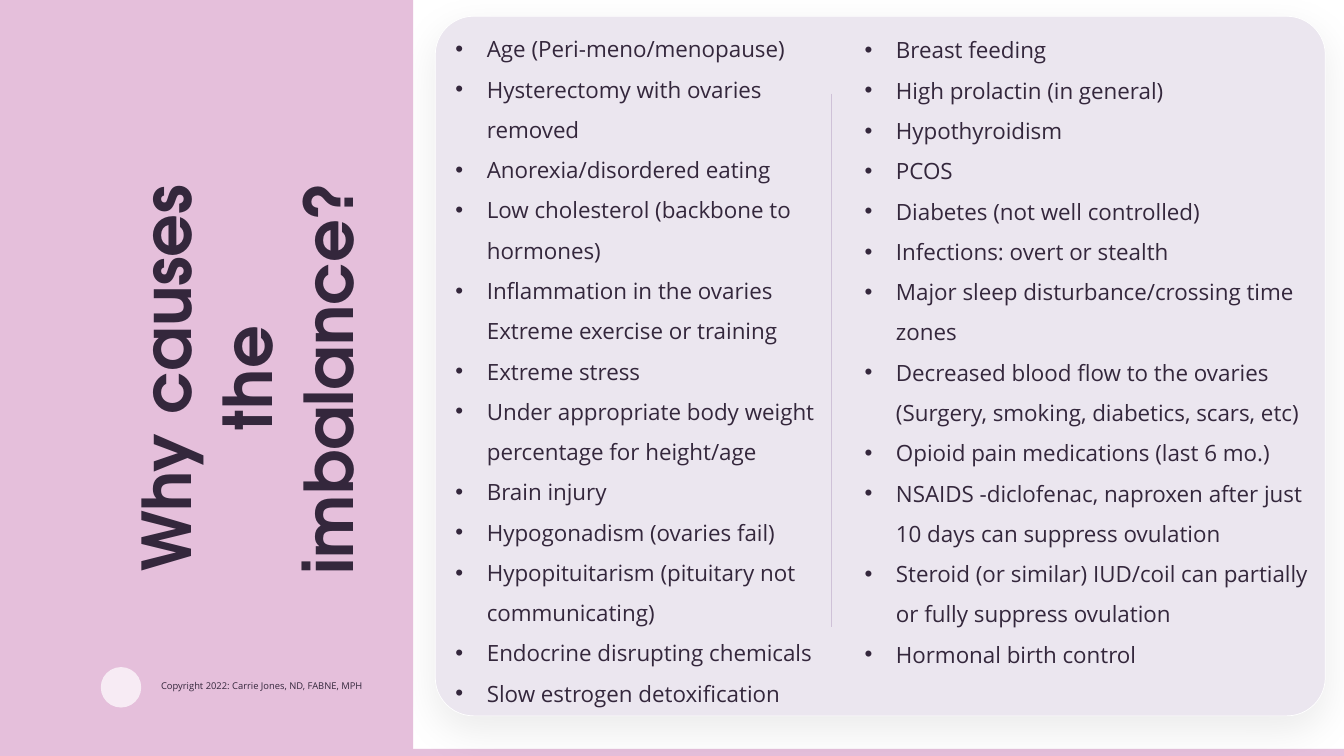
from collections import namedtuple

from lxml import etree
from pptx import Presentation
from pptx.dml.color import RGBColor
from pptx.enum.shapes import MSO_CONNECTOR, MSO_SHAPE
from pptx.enum.text import MSO_AUTO_SIZE, PP_ALIGN
from pptx.oxml.ns import qn
from pptx.util import Cm, Pt

RECTANGLE = MSO_SHAPE.RECTANGLE
ROUNDED = MSO_SHAPE.ROUNDED_RECTANGLE
OVAL = MSO_SHAPE.OVAL
STRAIGHT = MSO_CONNECTOR.STRAIGHT
GROW = MSO_AUTO_SIZE.SHAPE_TO_FIT_TEXT
CENTER = PP_ALIGN.CENTER

COLORS = {
    "pink": "E5BFDB",
    "lilac": "EBE6EF",
    "divider": "CEC1D7",
    "ink": "34273C",
    "white": "FFFFFF",
    "shadow": "000000",
}
BODY_FONT = "Open Sans"
TITLE_FONT = "TeX Gyre Adventor"
BULLET_INDENT = 0.79

TITLE = "Why causes the imbalance?"
COPYRIGHT = "Copyright 2022: Carrie Jones, ND, FABNE, MPH"
LEFT_CAUSES = [
    "Age (Peri-meno/menopause)",
    "Hysterectomy with ovaries removed",
    "Anorexia/disordered eating",
    "Low cholesterol (backbone to hormones)",
    "Inflammation in the ovaries Extreme exercise or training",
    "Extreme stress",
    "Under appropriate body weight percentage for height/age",
    "Brain injury",
    "Hypogonadism (ovaries fail)",
    "Hypopituitarism (pituitary not communicating)",
    "Endocrine disrupting chemicals",
    "Slow estrogen detoxification",
]
RIGHT_CAUSES = [
    "Breast feeding",
    "High prolactin (in general)",
    "Hypothyroidism",
    "PCOS",
    "Diabetes (not well controlled)",
    "Infections: overt or stealth",
    "Major sleep disturbance/crossing time zones",
    "Decreased blood flow to the ovaries (Surgery, smoking, diabetics, scars, etc)",
    "Opioid pain medications (last 6 mo.)",
    "NSAIDS -diclofenac, naproxen after just 10 days can suppress ovulation",
    "Steroid (or similar) IUD/coil can partially or fully suppress ovulation",
    "Hormonal birth control",
]

Box = namedtuple("Box", "left top width height")


def color(name):
    return RGBColor.from_string(COLORS[name])


def inside(box, left, top, width, height):
    """Return a box whose position is measured from the corner of another."""
    return Box(box.left + left, box.top + top, width, height)


def add_block(page, kind, box, fill):
    block = page.shapes.add_shape(kind, *map(Cm, box))
    block.shadow.inherit = False
    block.fill.solid()
    block.fill.fore_color.rgb = color(fill)
    block.line.fill.background()
    return block


def add_text(page, box, lines, font, size, bold=False, wrap=True):
    text_box = page.shapes.add_textbox(*map(Cm, box))
    frame = text_box.text_frame
    frame.word_wrap = wrap
    frame.auto_size = GROW
    frame.text = "\n".join(lines)
    for para in frame.paragraphs:
        for span in para.runs:
            span.font.name = font
            span.font.size = Pt(size)
            span.font.bold = bold
            span.font.color.rgb = color("ink")
    return text_box


def add_alpha(color_element, percent):
    etree.SubElement(color_element, qn("a:alpha"), val=str(percent * 1000))


def add_soft_shadow(shape):
    effects = shape._element.spPr.find(qn("a:effectLst"))
    shadow = etree.SubElement(
        effects, qn("a:outerShdw"), blurRad=str(Pt(30)), dist=str(Pt(10)),
        dir=str(90 * 60000), algn="t", rotWithShape="0")
    tint = etree.SubElement(shadow, qn("a:srgbClr"), val=COLORS["shadow"])
    add_alpha(tint, 8)


def add_causes(page, box, causes):
    column = add_text(page, box, causes, BODY_FONT, 16)
    for para in column.text_frame.paragraphs:
        properties = para._p.get_or_add_pPr()
        properties.set("marL", str(Cm(BULLET_INDENT)))
        properties.set("indent", str(-Cm(BULLET_INDENT)))
        etree.SubElement(properties, qn("a:buFont"), typeface="Arial")
        etree.SubElement(properties, qn("a:buChar"), char="•")
        para.line_spacing = 1.5


def add_divider(page, x, top, bottom):
    divider = page.shapes.add_connector(STRAIGHT, Cm(x), Cm(top), Cm(x), Cm(bottom))
    divider.line.color.rgb = color("divider")
    divider.line.width = Pt(0.5)
    etree.SubElement(divider._element.spPr, qn("a:effectLst"))


def add_card(page, box):
    """Rounded card holding the two columns of causes and their divider."""
    card = add_block(page, ROUNDED, box, "lilac")
    card.adjustments[0] = 0.055
    card.line.color.rgb = color("white")
    card.line.width = Pt(0.5)
    add_soft_shadow(card)
    add_causes(page, inside(box, 0.26, 0.02, 10.41, 18.62), LEFT_CAUSES)
    add_causes(page, inside(box, 10.57, 0.05, 12.19, 16.56), RIGHT_CAUSES)
    add_divider(page, box.left + 9.99, box.top + 1.95, box.top + 15.39)


def add_title_panel(page, box):
    """Pink side panel with the upright title and the copyright line."""
    add_block(page, RECTANGLE, box, "pink")
    title = add_text(page, inside(box, -1.07, 7.34, 12.55, 4.37), [TITLE],
                     TITLE_FONT, 48, bold=True)
    title.rotation = 270
    title.text_frame.paragraphs[0].alignment = CENTER
    add_text(page, inside(box, 3.81, 17.02, 5.77, 0.53), [COPYRIGHT],
             BODY_FONT, 6.7, wrap=False)
    dot = add_block(page, OVAL, inside(box, 2.54, 16.81, 1.02, 1.02), "white")
    add_alpha(dot._element.spPr.find(".//" + qn("a:srgbClr")), 70)


def main():
    deck = Presentation()
    deck.slide_width, deck.slide_height = Cm(33.87), Cm(19.05)
    page = deck.slides.add_slide(deck.slide_layouts[6])
    add_block(page, RECTANGLE, Box(0, 18.87, 33.87, 0.18), "pink")
    add_card(page, Box(10.97, 0.41, 22.43, 17.63))
    add_title_panel(page, Box(0, 0, 10.41, 19.05))
    deck.save("out.pptx")


if __name__ == "__main__":
    main()
